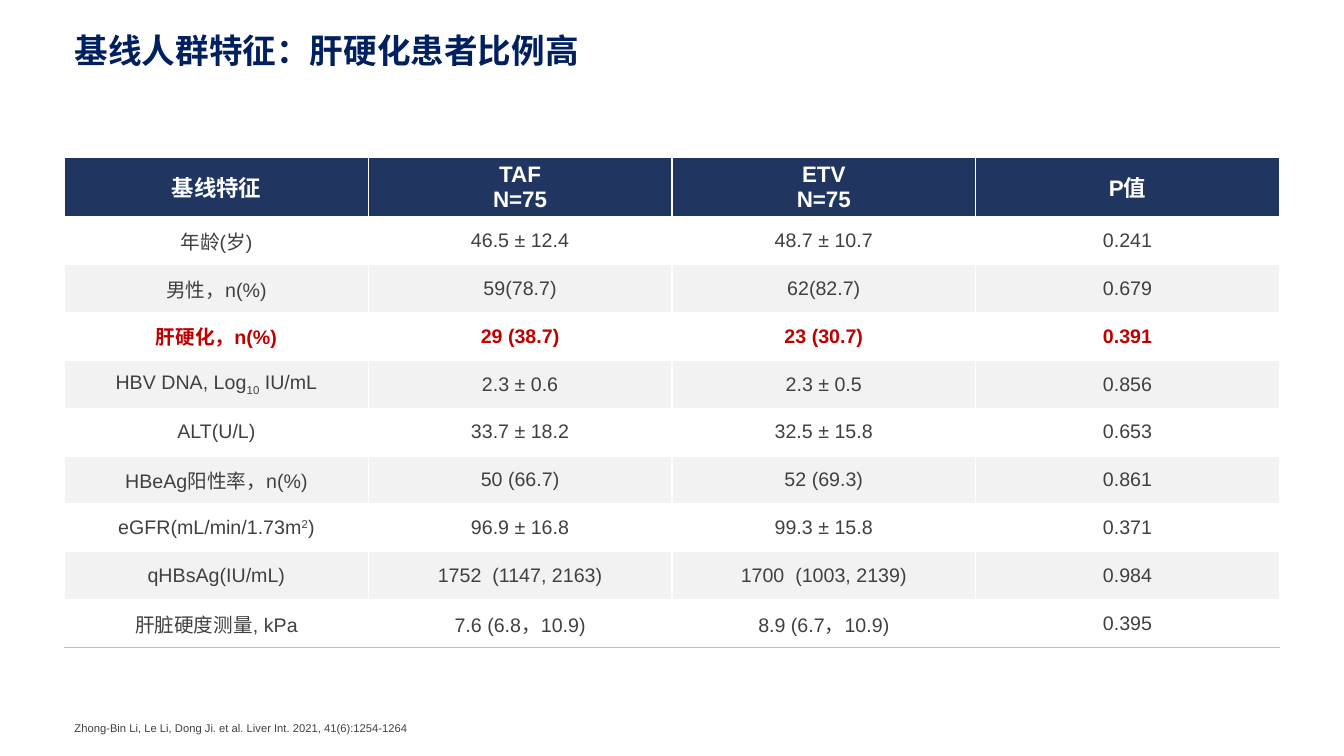
from lxml import etree
from pptx import Presentation
from pptx.dml.color import RGBColor
from pptx.enum.text import MSO_ANCHOR, PP_ALIGN
from pptx.oxml.ns import qn
from pptx.util import Inches, Pt

MIDDLE, BOTTOM = MSO_ANCHOR.MIDDLE, MSO_ANCHOR.BOTTOM
CENTER, JUSTIFY = PP_ALIGN.CENTER, PP_ALIGN.JUSTIFY

NAVY = RGBColor(0x00, 0x20, 0x60)
HEAD = RGBColor(0x20, 0x36, 0x61)
INK = RGBColor(0x40, 0x40, 0x40)
RED = RGBColor(0xC0, 0x00, 0x00)
WHITE = RGBColor(0xFF, 0xFF, 0xFF)
BAND = RGBColor(0xF2, 0xF2, 0xF2)
GREY = RGBColor(0xBF, 0xBF, 0xBF)

WIDE, HIGH = 13.33, 7.5
LEFT = 0.64 / WIDE
WIDTH = 12.05 / WIDE

HEADER = ["基线特征", "TAF\nN=75", "ETV\nN=75", "P值"]
ROWS = [
    ["年龄(岁)", "46.5 ± 12.4", "48.7 ± 10.7", "0.241"],
    ["男性，n(%)", "59(78.7)", "62(82.7)", "0.679"],
    ["肝硬化，n(%)", "29 (38.7)", "23 (30.7)", "0.391"],
    [("HBV DNA, Log", "10", " IU/mL", -25), "2.3 ± 0.6", "2.3 ± 0.5", "0.856"],
    ["ALT(U/L)", "33.7 ± 18.2", "32.5 ± 15.8", "0.653"],
    ["HBeAg阳性率，n(%)", "50 (66.7)", "52 (69.3)", "0.861"],
    [("eGFR(mL/min/1.73m", "2", ")", 30), "96.9 ± 16.8", "99.3 ± 15.8", "0.371"],
    ["qHBsAg(IU/mL)", "1752  (1147, 2163)", "1700  (1003, 2139)", "0.984"],
    ["肝脏硬度测量, kPa", "7.6 (6.8，10.9)", "8.9 (6.7，10.9)", "0.395"],
]
KEY = 3


class Deck:
    face = "Arial"

    def __init__(self):
        self.prs = Presentation()
        self.prs.slide_width = Inches(WIDE)
        self.prs.slide_height = Inches(HIGH)
        self.slide = self.prs.slides.add_slide(self.prs.slide_layouts[5])

    def across(self, share):
        return int(self.prs.slide_width * share)

    def down(self, share):
        return int(self.prs.slide_height * share)

    def box(self, left, top, width, height):
        return self.across(left), self.down(top), self.across(width), self.down(height)

    def style(self, frame, size, color, bold, align):
        for para in frame.paragraphs:
            para.alignment = align
            font = para.font
            font.name, font.size, font.bold = self.face, Pt(size), bold
            font.color.rgb = color

    def title(self, text, top, height):
        shape = self.slide.shapes.title
        shape.left, shape.top, shape.width, shape.height = self.box(LEFT, top, WIDTH, height)
        frame = shape.text_frame
        frame.text = text
        frame.vertical_anchor = MIDDLE
        self.style(frame, 24, NAVY, True, JUSTIFY)

    def note(self, text, top, width, height):
        shape = self.slide.shapes.add_textbox(*self.box(LEFT, top, width, height))
        frame = shape.text_frame
        frame.word_wrap = True
        frame.vertical_anchor = BOTTOM
        frame.text = text
        self.style(frame, 8, INK, False, JUSTIFY)

    def edges(self, cell, base):
        props = cell._tc.get_or_add_tcPr()
        sides = {"a:lnL": WHITE, "a:lnR": WHITE, "a:lnT": WHITE, "a:lnB": base}
        for spot, (tag, color) in enumerate(sides.items()):
            line = etree.Element(qn(tag), w=str(Pt(1)))
            fill = etree.SubElement(line, qn("a:solidFill"))
            etree.SubElement(fill, qn("a:srgbClr"), val=str(color))
            props.insert(spot, line)

    def label(self, frame, text):
        if isinstance(text, str):
            frame.text = text
            return
        *parts, shift = text
        runs = [frame.paragraphs[0].add_run() for _ in parts]
        for run, part in zip(runs, parts):
            run.text = part
        runs[1]._r.get_or_add_rPr().set("baseline", str(shift * 1000))

    def cell(self, cell, text, fill, size, color, bold, base):
        self.label(cell.text_frame, text)
        self.style(cell.text_frame, size, color, bold, CENTER)
        cell.vertical_anchor = MIDDLE
        cell.margin_left = cell.margin_right = Inches(0.07)
        cell.margin_top = cell.margin_bottom = Inches(0.03)
        cell.fill.solid()
        cell.fill.fore_color.rgb = fill
        self.edges(cell, base)

    def table(self, rows, top, first, pitch):
        height = first + pitch * (len(rows) - 1)
        place = self.box(LEFT, top, WIDTH, height)
        table = self.slide.shapes.add_table(len(rows), len(rows[0]), *place).table
        table.horz_banding = False
        last = len(rows) - 1
        for r, row in enumerate(rows):
            table.rows[r].height = self.down(pitch if r else first)
            fill = HEAD if r == 0 else WHITE if r % 2 else BAND
            color = WHITE if r == 0 else RED if r == KEY else INK
            size = 14 if r else 16
            base = GREY if r == last else WHITE
            for c, text in enumerate(row):
                self.cell(table.cell(r, c), text, fill, size, color, r in (0, KEY), base)


def main():
    deck = Deck()
    deck.title("基线人群特征：肝硬化患者比例高", 0.12 / HIGH, 0.1)
    deck.table([HEADER] + ROWS, 1.56 / HIGH, 0.59 / HIGH, 0.475 / HIGH)
    deck.note("Zhong-Bin Li, Le Li, Dong Ji. et al. Liver Int. 2021, 41(6):1254-1264",
              0.93, 0.83, 0.36 / HIGH)
    deck.prs.save("out.pptx")


if __name__ == "__main__":
    main()
